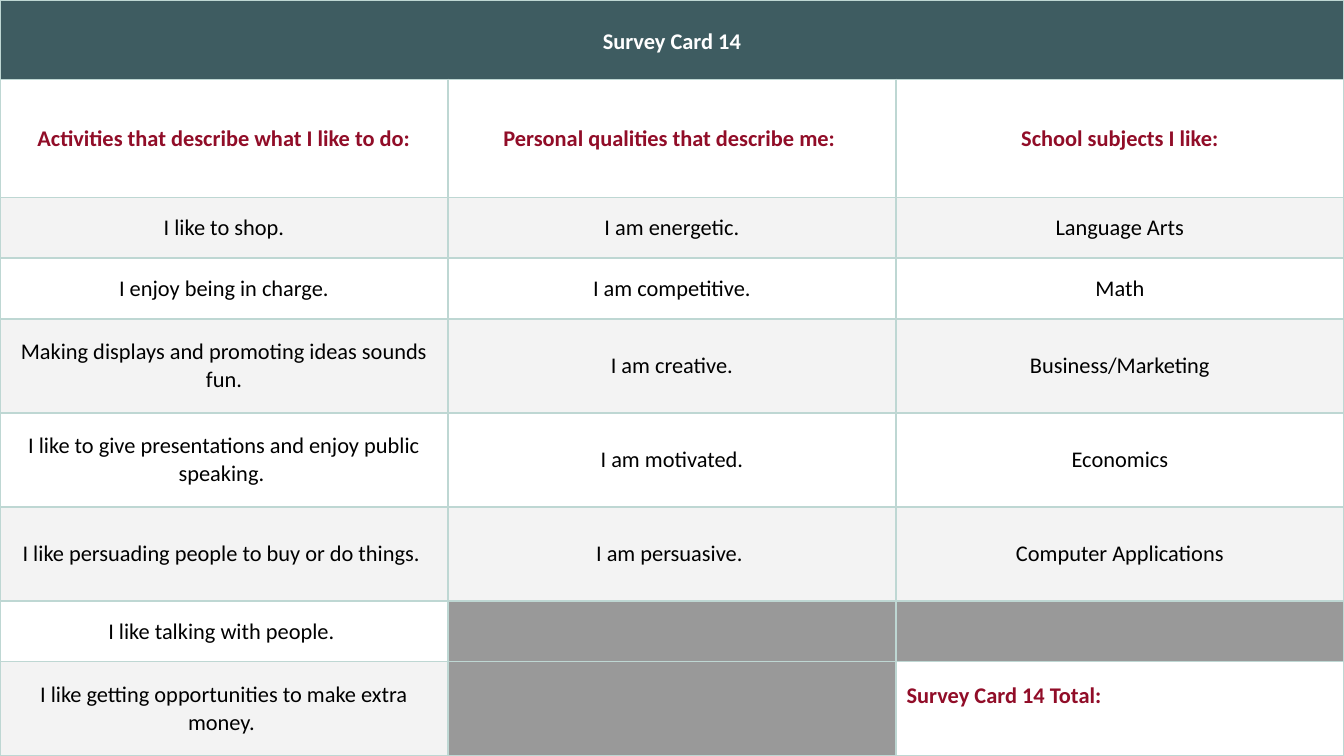
from lxml.etree import SubElement
from pptx import Presentation
from pptx.dml.color import RGBColor
from pptx.enum.text import MSO_ANCHOR, PP_ALIGN
from pptx.oxml.ns import qn
from pptx.util import Inches, Pt

TEAL, CRIMSON, BLACK, WHITE = "3E5C61", "910D28", "000000", "FFFFFF"
STRIPE, BLOCKED, BORDER = "F3F3F3", "999999", "BED7D3"
MARGIN = 0.08

TITLE = "Survey Card 14"
TOTAL = "Survey Card 14 Total:"
HEADINGS = [
    "Activities that describe what I like to do:",
    "Personal qualities that describe me: ",
    "School subjects I like:",
]
ANSWERS = [
    ["I like to shop.", "I am energetic.", "Language Arts"],
    ["I enjoy being in charge.", "I am competitive.", "Math"],
    ["Making displays and promoting ideas sounds fun.", "I am creative.",
     "Business/Marketing"],
    ["I like to give presentations and enjoy public speaking. ",
     "I am motivated.", "Economics"],
    ["I like persuading people to buy or do things. ", "I am persuasive. ",
     "Computer Applications"],
    ["I like talking with people. ", None, None],
    ["I like getting opportunities to make extra money. ", None, TOTAL],
]
ROW_HEIGHTS = [0.59, 0.88, 0.45, 0.45, 0.7, 0.7, 0.7, 0.45, 0.7]

HEADING_FORMAT = {"space_before": Pt(10)}
TITLE_FORMAT = {"line_spacing": 1.15, "space_after": Pt(6)}
TOTAL_FORMAT = {"alignment": PP_ALIGN.LEFT}


def color(value):
    return RGBColor.from_string(value)


def set_all(target, values):
    for name, value in values.items():
        setattr(target, name, value)


def add_borders(cell):
    """Draw a thin line on all four sides; must run before the fill is set."""
    properties = cell._tc.get_or_add_tcPr()
    for side in ("a:lnL", "a:lnR", "a:lnT", "a:lnB"):
        line = SubElement(properties, qn(side), w=str(Pt(1)))
        fill = SubElement(line, qn("a:solidFill"))
        SubElement(fill, qn("a:srgbClr"), val=BORDER)


def style_cell(cell, fill, margin=MARGIN):
    add_borders(cell)
    cell.fill.solid()
    cell.fill.fore_color.rgb = color(fill)
    sides = ("margin_left", "margin_right", "margin_top", "margin_bottom")
    set_all(cell, dict.fromkeys(sides, Inches(margin)))
    cell.vertical_anchor = MSO_ANCHOR.MIDDLE


def write_cell(cell, text, text_color=BLACK, bold=False, para_format=None):
    para = cell.text_frame.paragraphs[0]
    set_all(para, {"alignment": PP_ALIGN.CENTER, **(para_format or {})})
    span = para.add_run()
    span.text = text
    set_all(span.font, {"name": "Calibri", "size": Pt(12), "bold": bold})
    span.font.color.rgb = color(text_color)


def fill_answer(cell, text, stripe):
    if text is None:
        style_cell(cell, BLOCKED, margin=0)
    elif text == TOTAL:
        style_cell(cell, WHITE)
        set_all(cell, {"vertical_anchor": MSO_ANCHOR.TOP,
                       "margin_top": Inches(0.15)})
        write_cell(cell, text, CRIMSON, True, TOTAL_FORMAT)
    else:
        style_cell(cell, stripe)
        write_cell(cell, text)


def add_survey_card(page, left, top, width, height):
    columns = len(HEADINGS)
    frame = page.shapes.add_table(
        len(ROW_HEIGHTS), columns, left, top, width, height)
    table = frame.table
    for column in table.columns:
        column.width = width // columns
    for row, share in zip(table.rows, ROW_HEIGHTS):
        row.height = int(height * share / sum(ROW_HEIGHTS))

    for index in range(columns):
        style_cell(table.cell(0, index), TEAL)
    table.cell(0, 0).merge(table.cell(0, columns - 1))
    write_cell(table.cell(0, 0), TITLE, WHITE, True, TITLE_FORMAT)

    for index, heading in enumerate(HEADINGS):
        cell = table.cell(1, index)
        style_cell(cell, WHITE)
        write_cell(cell, heading, CRIMSON, True, HEADING_FORMAT)

    for number, answers in enumerate(ANSWERS):
        stripe = WHITE if number % 2 else STRIPE
        for index, text in enumerate(answers):
            fill_answer(table.cell(number + 2, index), text, stripe)


def main():
    deck = Presentation()
    width = Inches(10)
    height = width * 9 // 16
    set_all(deck, {"slide_width": width, "slide_height": height})
    page = deck.slides.add_slide(deck.slide_layouts[6])
    add_survey_card(page, Inches(0), Inches(0), width, height)
    deck.save("out.pptx")


if __name__ == "__main__":
    main()
